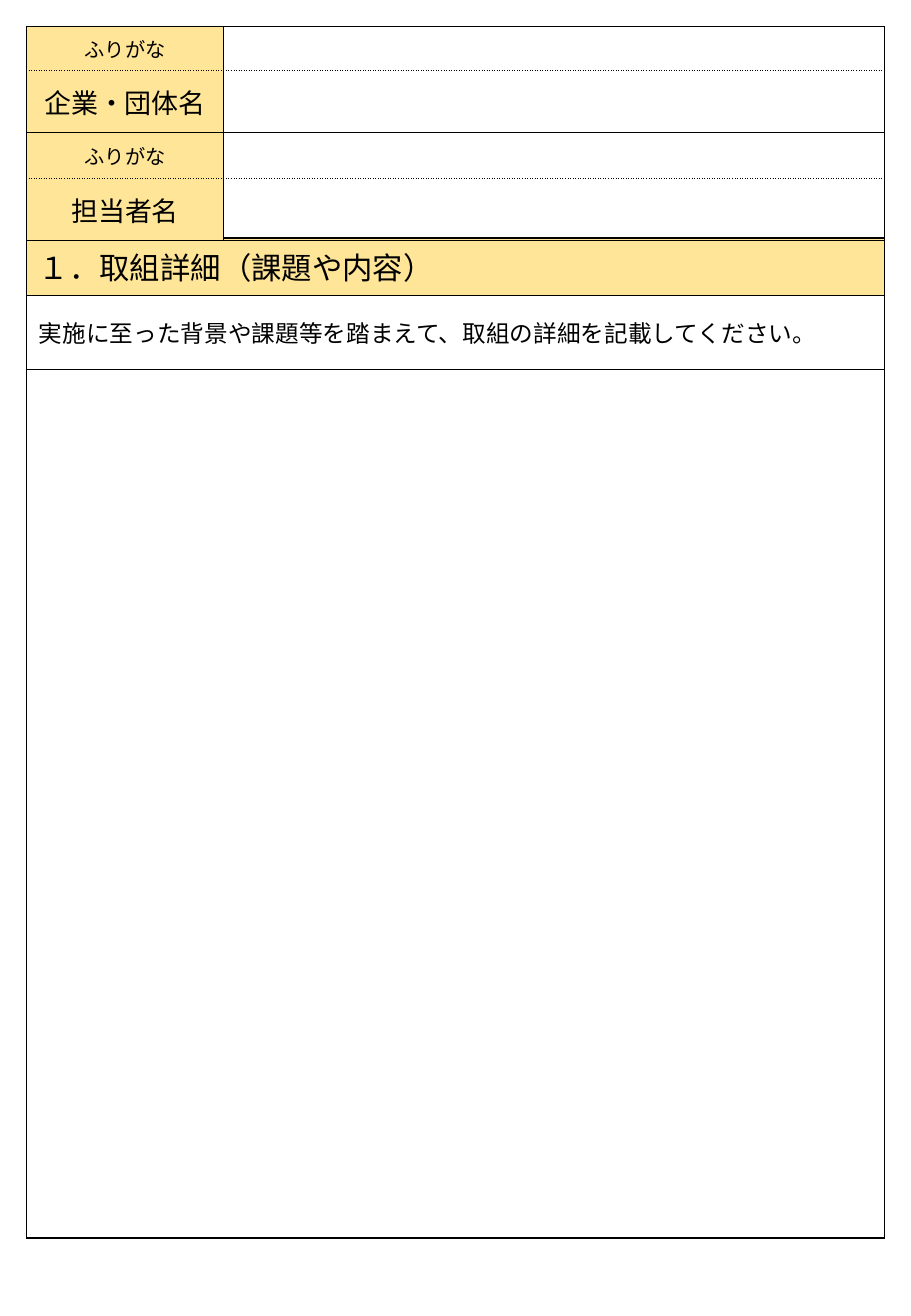
from lxml import etree
from pptx import Presentation
from pptx.dml.color import RGBColor
from pptx.enum.text import MSO_ANCHOR, PP_ALIGN
from pptx.oxml.ns import qn
from pptx.util import Inches, Pt

CENTER = PP_ALIGN.CENTER
LEFT = PP_ALIGN.LEFT
MIDDLE = MSO_ANCHOR.MIDDLE

GRID = Inches(0.01)
PAGE_COLUMNS, PAGE_ROWS = 750, 1083
MARGIN = 22
DETAIL_TOP = 196
LABEL_COLUMN, ENTRY_COLUMN = 162, 544
FORM_WIDTH = LABEL_COLUMN + ENTRY_COLUMN

FONT = "Noto Sans CJK JP"
COLORS = {"ink": "000000", "label": "FFE598"}

CONTACT_ROWS = [
    ("ふりがな", 12, 36),
    ("企業・団体名", 16, 51),
    ("ふりがな", 12, 38),
    ("担当者名", 16, 51),
]
DETAIL_ROWS = [
    ("１．取組詳細（課題や内容）", 18, 47),
    ("実施に至った背景や課題等を踏まえて、取組の詳細を記載してください。", 14, 61),
    ("", 14, 715),
]


def add_grid(page, top, columns, rows):
    frame = page.shapes.add_table(
        len(rows), len(columns), MARGIN * GRID, top * GRID,
        sum(columns) * GRID, sum(rows) * GRID)
    table = frame.table
    table.first_row = False
    table.horz_banding = False
    for column, width in zip(table.columns, columns):
        column.width = width * GRID
    for row, height in zip(table.rows, rows):
        row.height = height * GRID
    return table


def set_borders(cell, dotted_side=None):
    properties = cell._tc.get_or_add_tcPr()
    for side in ("L", "R", "T", "B"):
        line = etree.SubElement(properties, qn(f"a:ln{side}"), w=str(Pt(1)))
        paint = etree.SubElement(line, qn("a:solidFill"))
        etree.SubElement(paint, qn("a:srgbClr"), val=COLORS["ink"])
        dash = "sysDot" if side == dotted_side else "solid"
        etree.SubElement(line, qn("a:prstDash"), val=dash)


def set_fill(cell, color=None):
    if color:
        cell.fill.solid()
        cell.fill.fore_color.rgb = RGBColor.from_string(COLORS[color])
    else:
        cell.fill.background()


def write(cell, text, size, align=LEFT):
    cell.vertical_anchor = MIDDLE
    para = cell.text_frame.paragraphs[0]
    para.alignment = align
    if not text:
        etree.SubElement(para._p, qn("a:endParaRPr"), sz=str(size * 100))
        return
    span = para.add_run()
    span.text = text
    span.font.color.rgb = RGBColor.from_string(COLORS["ink"])
    for name, value in {"name": FONT, "size": Pt(size), "bold": False}.items():
        setattr(span.font, name, value)
    etree.SubElement(span.font._element, qn("a:ea"), typeface=FONT)


def add_contact_table(page):
    heights = [height for _, _, height in CONTACT_ROWS]
    table = add_grid(page, MARGIN, [LABEL_COLUMN, ENTRY_COLUMN], heights)
    for index, (text, size, _) in enumerate(CONTACT_ROWS):
        label, entry = table.rows[index].cells
        for cell in (label, entry):
            set_borders(cell, "T" if index % 2 else "B")
        set_fill(label, "label")
        set_fill(entry)
        write(label, text, size, CENTER)
        write(entry, "", 12)


def add_detail_table(page):
    heights = [height for _, _, height in DETAIL_ROWS]
    table = add_grid(page, DETAIL_TOP, [FORM_WIDTH], heights)
    for index, (text, size, _) in enumerate(DETAIL_ROWS):
        cell = table.cell(index, 0)
        set_borders(cell)
        set_fill(cell, "label" if index == 0 else None)
        write(cell, text, size)


def main():
    deck = Presentation()
    deck.slide_width = PAGE_COLUMNS * GRID
    deck.slide_height = PAGE_ROWS * GRID
    page = deck.slides.add_slide(deck.slide_layouts[6])
    add_detail_table(page)
    add_contact_table(page)
    deck.save("out.pptx")


if __name__ == "__main__":
    main()
